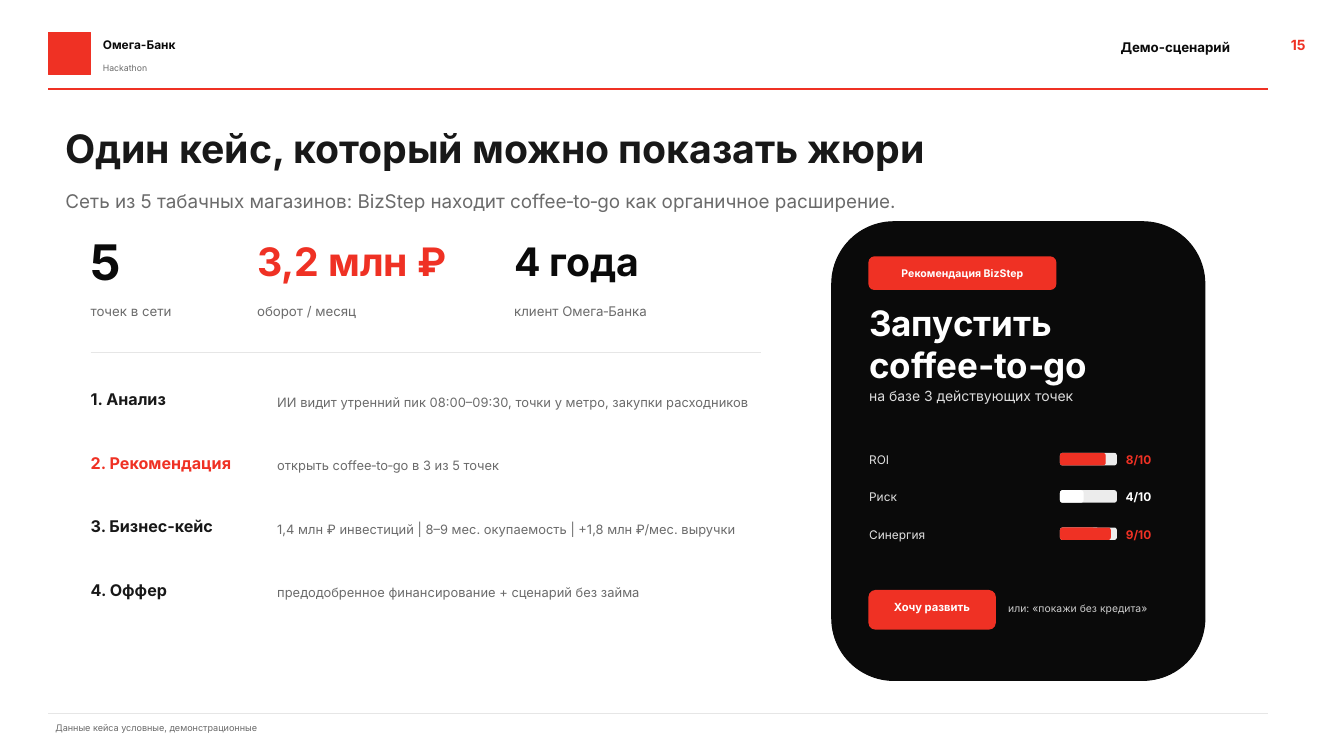
import dataclasses

import pptx
import pptx.dml.color
import pptx.enum.shapes
import pptx.enum.text
import pptx.oxml.ns
import pptx.util

PX = 9144
MIDDLE = pptx.enum.text.MSO_ANCHOR.MIDDLE
LEFT = pptx.enum.text.PP_ALIGN.LEFT
CENTER = pptx.enum.text.PP_ALIGN.CENTER
RIGHT = pptx.enum.text.PP_ALIGN.RIGHT
RECT = pptx.enum.shapes.MSO_SHAPE.RECTANGLE
ROUNDED = pptx.enum.shapes.MSO_SHAPE.ROUNDED_RECTANGLE


@dataclasses.dataclass(frozen=True)
class Theme:
    font: str = "Inter"
    red: str = "EF3124"
    black: str = "0A0A0A"
    ink: str = "181818"
    grey: str = "6B6B6B"
    rule: str = "E6E6E6"
    track: str = "ECECEC"
    white: str = "FFFFFF"
    soft: str = "DCDCDC"
    metric: str = "E0E0E0"
    faint: str = "CCCCCC"
    title: float = 28
    big_fact: float = 35
    headline: float = 25
    subtitle: float = 13.5
    step: float = 11.5
    body: float = 10
    label: float = 9.5
    detail: float = 9.2
    small: float = 8.5
    button: float = 8
    badge: float = 7.5
    hint: float = 7.4
    footer: float = 6.5
    tiny: float = 6.2


THEME = Theme()


def rgb(color):
    return pptx.dml.color.RGBColor.from_string(color)


def px(*lengths):
    return [pptx.util.Emu(length * PX) for length in lengths]


def write(frame, text, size, color, bold=False, align=LEFT):
    frame.word_wrap = True
    frame.auto_size = pptx.enum.text.MSO_AUTO_SIZE.NONE
    frame.vertical_anchor = MIDDLE
    frame.margin_left = frame.margin_right = 0
    frame.margin_top = frame.margin_bottom = 0
    paragraph = frame.paragraphs[0]
    paragraph.alignment = align
    run = paragraph.add_run()
    run.text = text
    run.font.name = THEME.font
    run.font.size = pptx.util.Pt(size)
    run.font.bold = bold
    run.font.color.rgb = rgb(color)


def add_label(slide, box, text, size, color, bold=False, align=LEFT):
    label = slide.shapes.add_textbox(*px(*box))
    write(label.text_frame, text, size, color, bold, align)


def add_title(slide, box, text):
    title = slide.shapes.title
    title.left, title.top, title.width, title.height = px(*box)
    write(title.text_frame, text, THEME.title, THEME.ink, True)


def add_panel(slide, kind, box, color, outline=1):
    panel = slide.shapes.add_shape(kind, *px(*box))
    panel.shadow.inherit = False
    panel.fill.solid()
    panel.fill.fore_color.rgb = rgb(color)
    panel.line.color.rgb = rgb(color)
    panel.line.width = pptx.util.Pt(outline)
    return panel


def add_button(slide, box, text, size, lift=0):
    button = add_panel(slide, ROUNDED, box, THEME.red)
    write(button.text_frame, text, size, THEME.white, True, CENTER)
    button.text_frame.margin_bottom = pptx.util.Emu(2 * lift * PX)


def add_rule(slide, left, right, y, color, width):
    rule = slide.shapes.add_connector(
        pptx.enum.shapes.MSO_CONNECTOR.STRAIGHT, *px(left, y, right, y))
    rule.line.color.rgb = rgb(color)
    rule.line.width = pptx.util.Pt(width)
    properties = rule._element.spPr
    properties.append(properties.makeelement(pptx.oxml.ns.qn("a:effectLst"), {}))


def add_fact(slide, left, width, value, caption, size, color):
    add_label(slide, (left, 235, width, 48), value, size, color, True)
    add_label(slide, (left, 287, width, 44), caption, THEME.label, THEME.grey)


def add_step(slide, top, name, detail, color):
    add_label(slide, (90, top, 170, 22), name, THEME.step, color, True)
    add_label(slide, (275, top, 490, 28), detail, THEME.detail, THEME.grey)


def add_score(slide, top, name, score, color):
    track = 55
    add_label(slide, (862, top, 175, 22), name, THEME.small, THEME.metric)
    add_panel(slide, ROUNDED, (1052, top + 5, track, 11), THEME.track)
    add_panel(slide, ROUNDED, (1052, top + 5, track * score // 10, 11), color)
    add_label(slide, (1112, top, 30, 22), f"{score}/10",
              THEME.small, color, True, RIGHT)


def add_header(slide):
    add_panel(slide, RECT, (48, 32, 42, 42), THEME.red)
    add_label(slide, (102, 35, 145, 18), "Омега-Банк", THEME.small, THEME.black, True)
    add_label(slide, (102, 60, 110, 15), "Hackathon", THEME.tiny, THEME.grey)
    add_rule(slide, 48, 1258, 88, THEME.red, 1.2)
    add_label(slide, (1245, 30, 50, 30), "15", THEME.body, THEME.red, True, RIGHT)
    add_label(slide, (275, 32, 945, 30), "Демо-сценарий",
              THEME.label, THEME.black, True, RIGHT)


def add_case(slide):
    facts = [
        (90, 120, "5", "точек в сети", THEME.big_fact, THEME.black),
        (255, 210, "3,2 млн ₽", "оборот / месяц", THEME.title, THEME.red),
        (510, 230, "4 года", "клиент Омега‑Банка", THEME.title, THEME.black),
    ]
    for fact in facts:
        add_fact(slide, *fact)
    add_rule(slide, 90, 755, 350, THEME.rule, 1)
    steps = [
        ("1. Анализ",
         "ИИ видит утренний пик 08:00–09:30, точки у метро, закупки расходников",
         THEME.ink),
        ("2. Рекомендация", "открыть coffee‑to‑go в 3 из 5 точек", THEME.red),
        ("3. Бизнес‑кейс",
         "1,4 млн ₽ инвестиций | 8–9 мес. окупаемость | +1,8 млн ₽/мес. выручки",
         THEME.ink),
        ("4. Оффер", "предодобренное финансирование + сценарий без займа",
         THEME.ink),
    ]
    for index, step in enumerate(steps):
        add_step(slide, 385 + 63 * index, *step)


def add_phone(slide):
    add_panel(slide, ROUNDED, (825, 220, 370, 455), THEME.black, 0.8)
    add_button(slide, (862, 255, 185, 32), "Рекомендация BizStep", THEME.badge)
    add_label(slide, (862, 310, 280, 62), "Запустить coffee‑to‑go",
              THEME.headline, THEME.white, True)
    add_label(slide, (862, 382, 280, 22), "на базе 3 действующих точек",
              THEME.body, THEME.soft)
    scores = [("ROI", 8, THEME.red), ("Риск", 4, THEME.white),
              ("Синергия", 9, THEME.red)]
    for index, score in enumerate(scores):
        add_score(slide, 445 + 37 * index, *score)
    add_button(slide, (862, 586, 125, 38), "Хочу развить", THEME.button, lift=3)
    add_label(slide, (1000, 596, 170, 15), "или: «покажи без кредита»",
              THEME.hint, THEME.faint)


def main():
    deck = pptx.Presentation()
    deck.slide_width, deck.slide_height = px(1333, 750)
    slide = deck.slides.add_slide(deck.slide_layouts[5])
    slide.background.fill.solid()
    slide.background.fill.fore_color.rgb = rgb(THEME.white)
    add_header(slide)
    add_title(slide, (65, 112, 1180, 70), "Один кейс, который можно показать жюри")
    add_label(slide, (65, 184, 1180, 30),
              "Сеть из 5 табачных магазинов: BizStep находит coffee‑to‑go "
              "как органичное расширение.", THEME.subtitle, THEME.grey)
    add_case(slide)
    add_phone(slide)
    add_rule(slide, 48, 1258, 708, THEME.rule, 0.8)
    add_label(slide, (55, 713, 550, 18), "Данные кейса условные, демонстрационные",
              THEME.footer, THEME.grey)
    deck.save("out.pptx")


if __name__ == "__main__":
    main()
